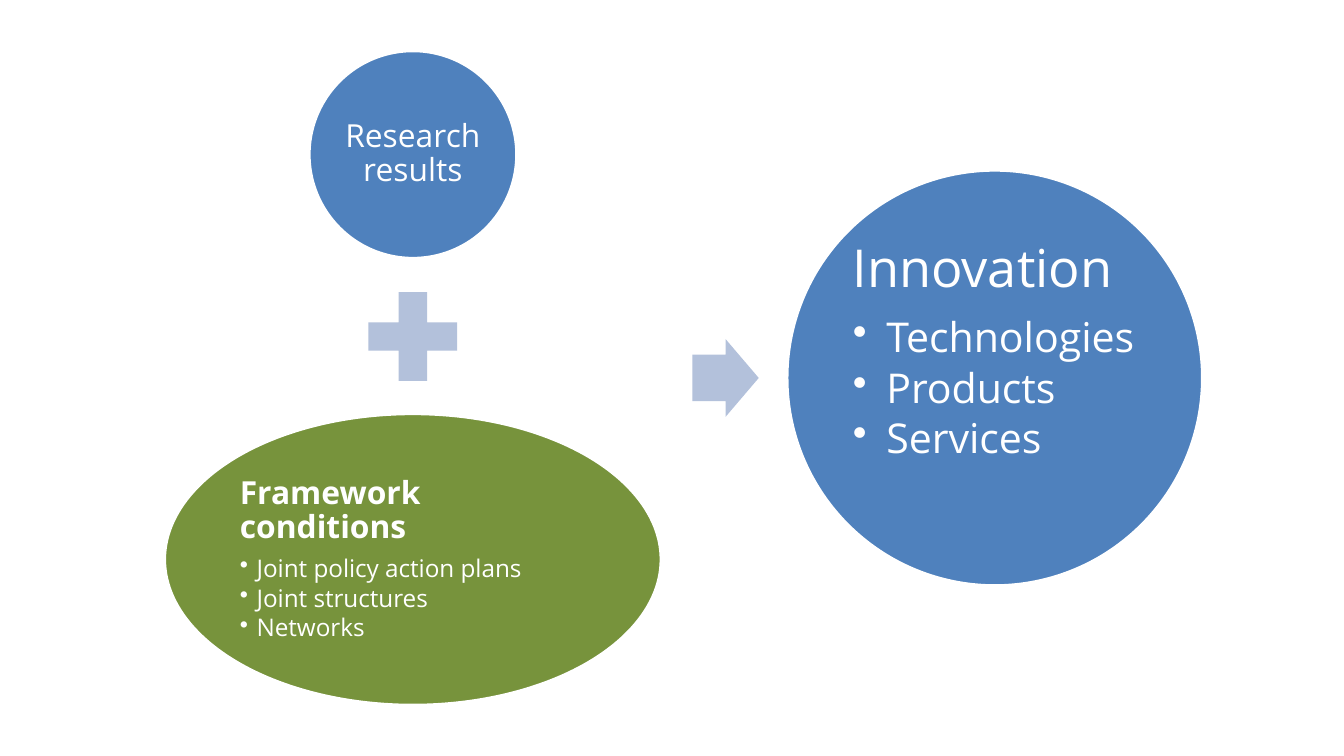
from lxml import etree
from pptx import Presentation
from pptx.dml.color import RGBColor
from pptx.enum.shapes import MSO_SHAPE
from pptx.enum.text import MSO_ANCHOR, PP_ALIGN
from pptx.oxml.ns import qn
from pptx.util import Pt

OVAL, PLUS, ARROW = MSO_SHAPE.OVAL, MSO_SHAPE.MATH_PLUS, MSO_SHAPE.RIGHT_ARROW
LEFT, CENTER, MIDDLE = PP_ALIGN.LEFT, PP_ALIGN.CENTER, MSO_ANCHOR.MIDDLE
FONT = "Open Sans"
BLUE, GREEN, PALE, WHITE = "4F81BD", "77933C", "B3C1DB", "FFFFFF"


def paint(target, color):
    target.solid()
    target.fore_color.rgb = RGBColor.from_string(color)


def assign(target, values):
    for key, value in values.items():
        setattr(target, key, value)


def draw(slide, kind, box, color):
    shape = slide.shapes.add_shape(kind, *[Pt(n) for n in box])
    shape.shadow.inherit = False
    paint(shape.fill, color)
    shape.line.fill.background()
    return shape


def bullet(para, indent):
    props = para._p.get_or_add_pPr()
    props.set("marL", str(Pt(indent)))
    props.set("indent", str(-Pt(indent)))
    etree.SubElement(props, qn("a:buChar")).set("char", "•")


def write(para, text, size, bold, align, gap):
    para.text = text
    assign(para, {"alignment": align, "line_spacing": 0.9,
                  "space_after": Pt(round(size * gap, 1))})
    assign(para.font, {"name": FONT, "size": Pt(size), "bold": bold})
    paint(para.font.fill, WHITE)


def bubble(slide, box, color, head, size, items=(), small=0, indent=0,
           bold=False, align=LEFT, inset=1.5, lift=0):
    shape = draw(slide, OVAL, box, color)
    paint(shape.line.fill, WHITE)
    shape.line.width = Pt(2)
    frame = shape.text_frame
    assign(frame, {"word_wrap": True, "vertical_anchor": MIDDLE,
                   "margin_left": Pt(inset), "margin_right": Pt(inset),
                   "margin_top": Pt(inset), "margin_bottom": Pt(inset + lift)})
    write(frame.paragraphs[0], head, size, bold, align, 0.35)
    for item in items:
        para = frame.add_paragraph()
        para.level = 1
        bullet(para, indent)
        write(para, item, small, False, align, 0.15)


def inputs(slide, left, top, width):
    mid = left + width / 2
    bubble(slide, (mid - 55.8, top, 111.6, 111.6), BLUE,
           "Research results", 17, align=CENTER)
    draw(slide, PLUS, (mid - 32.4, top + 120.9, 64.8, 64.8), PALE)
    bubble(slide, (left, top + 194.4, width, 156.6), GREEN,
           "Framework conditions", 17,
           ("Joint policy action plans", "Joint structures", "Networks"),
           small=13, indent=9, bold=True)


def outcome(slide, left, top, width):
    arrow = draw(slide, ARROW, (left, top + width / 2 - 20.8, 35.5, 41.6), PALE)
    arrow.adjustments[0] = 0.6
    bubble(slide, (left + 50.4, top, width, width), BLUE, "Innovation", 28,
           ("Technologies", "Products", "Services"),
           small=22, indent=18, inset=2.8, lift=27)


def main():
    deck = Presentation()
    assign(deck, {"slide_width": Pt(720), "slide_height": Pt(405)})
    slide = deck.slides.add_slide(deck.slide_layouts[6])
    inputs(slide, 88, 27, 266.4)
    outcome(slide, 371, 91, 223)
    deck.save("out.pptx")


if __name__ == "__main__":
    main()
